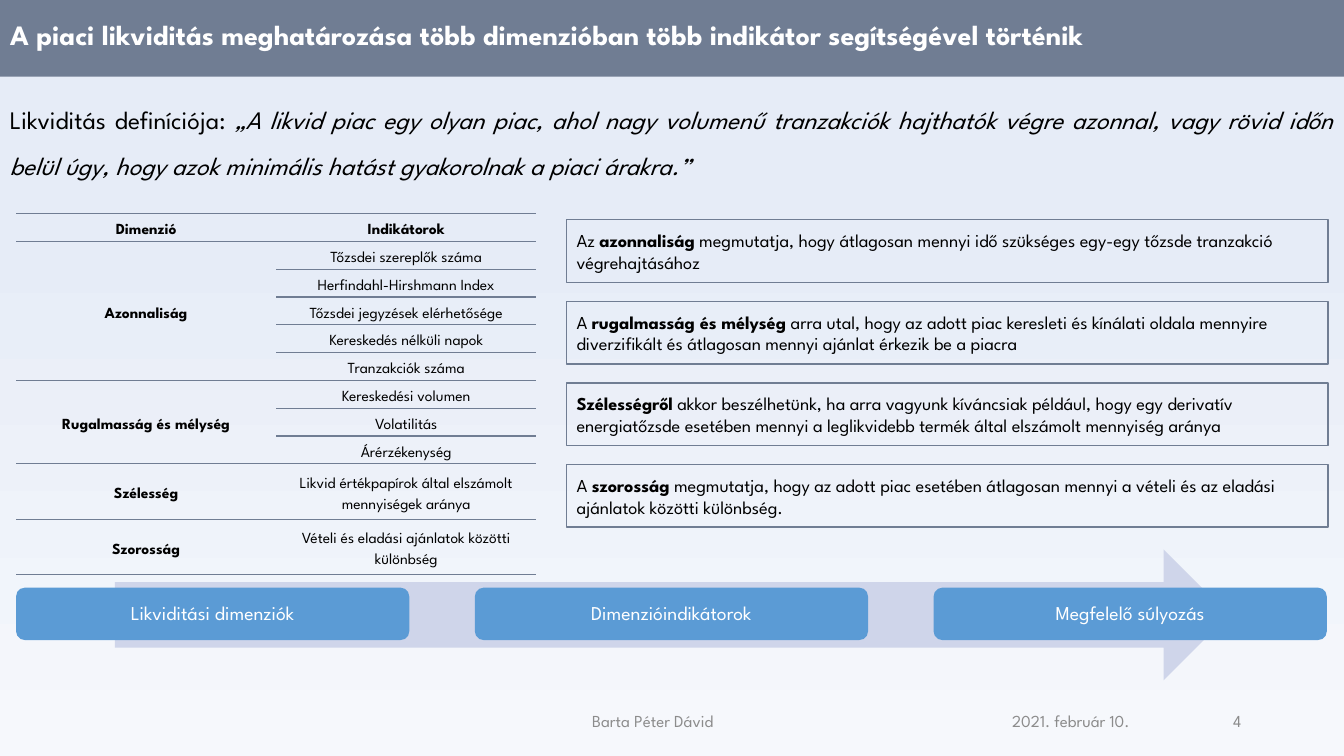
import pptx
import pptx.util
import pptx.dml.color
import pptx.enum.shapes
import pptx.enum.text
import pptx.oxml
import pptx.oxml.ns

Inches, Pt = pptx.util.Inches, pptx.util.Pt
ALIGN = pptx.enum.text.PP_ALIGN
MIDDLE = pptx.enum.text.MSO_ANCHOR.MIDDLE
SHAPES = pptx.enum.shapes.MSO_SHAPE

# Content
FONT = "League Spartan"
SLATE, BLUE, PALE_BLUE = "707D93", "5B9BD5", "CFD5EA"
BLACK, WHITE, GREY = "000000", "FFFFFF", "8C8C8C"
PLAIN_STYLE = "{2D5ABB26-0587-4C30-8999-92F81FD0307C}"

TITLE = "A piaci likviditás meghatározása több dimenzióban több indikátor segítségével történik"
# Each run is (text, style): "" plain, "b" bold, "i" italic
DEFINITION = [
    ("Likviditás definíciója: ", ""),
    ("„A likvid piac egy olyan piac, ahol nagy volumenű tranzakciók hajthatók végre azonnal, "
     "vagy rövid időn belül úgy, hogy azok minimális hatást gyakorolnak a piaci árakra.”", "i"),
]
HEADINGS = ("Dimenzió", "Indikátorok")
DIMENSIONS = [
    ("Azonnaliság", ["Tőzsdei szereplők száma", "Herfindahl-Hirshmann Index",
                     "Tőzsdei jegyzések elérhetősége", "Kereskedés nélküli napok",
                     "Tranzakciók száma"]),
    ("Rugalmasság és mélység", ["Kereskedési volumen", "Volatilitás", "Árérzékenység"]),
    ("Szélesség", ["Likvid értékpapírok által elszámolt mennyiségek aránya"]),
    ("Szorosság", ["Vételi és eladási ajánlatok közötti különbség"]),
]
EXPLANATIONS = [
    [("Az ", ""), ("azonnaliság", "b"),
     (" megmutatja, hogy átlagosan mennyi idő szükséges egy-egy tőzsde tranzakció "
      "végrehajtásához", "")],
    [("A ", ""), ("rugalmasság és mélység ", "b"),
     ("arra utal, hogy az adott piac keresleti és kínálati oldala mennyire diverzifikált és "
      "átlagosan mennyi ajánlat érkezik be a piacra", "")],
    [("Szélességről", "b"),
     (" akkor beszélhetünk, ha arra vagyunk kíváncsiak például, hogy egy derivatív energiatőzsde "
      "esetében mennyi a leglikvidebb termék által elszámolt mennyiség aránya", "")],
    [("A ", ""), ("szorosság", "b"),
     (" megmutatja, hogy az adott piac esetében átlagosan mennyi a vételi és az eladási "
      "ajánlatok közötti különbség.", "")],
]
STEPS = ["Likviditási dimenziók", "Dimenzióindikátorok", "Megfelelő súlyozás"]
# Text, left, width, alignment
FOOTERS = [
    ("Barta Péter Dávid", 3.56, 5.83, ALIGN.CENTER),
    ("2021. február 10.", 9.94, 1.96, ALIGN.LEFT),
    ("4", 11.9, 0.51, ALIGN.RIGHT),
]


def rgb(value):
    return pptx.dml.color.RGBColor.from_string(value)


def write(frame, runs, size, color=BLACK, align=ALIGN.LEFT, spacing=1.0):
    frame.word_wrap = True
    paragraph = frame.paragraphs[0]
    paragraph.alignment = align
    paragraph.line_spacing = spacing
    for text, style in runs:
        run = paragraph.add_run()
        run.text = text
        run.font.name, run.font.size = FONT, Pt(size)
        run.font.bold, run.font.italic = style == "b", style == "i"
        run.font.color.rgb = rgb(color)


def add_shape(kind, left, top, width, height, fill=None, line=None):
    shape = slide.shapes.add_shape(kind, Inches(left), Inches(top), Inches(width), Inches(height))
    shape.shadow.inherit = False
    if fill:
        shape.fill.solid()
        shape.fill.fore_color.rgb = rgb(fill)
    else:
        shape.fill.background()
    if line:
        shape.line.color.rgb = rgb(line)
        shape.line.width = Pt(1)
    else:
        shape.line.fill.background()
    shape.text_frame.vertical_anchor = MIDDLE
    return shape


def add_text_box(left, top, width, height):
    return slide.shapes.add_textbox(Inches(left), Inches(top), Inches(width), Inches(height)).text_frame


def fill_cell(cell, text, style):
    cell.margin_left = cell.margin_right = Inches(0.07)
    cell.margin_top = cell.margin_bottom = 0
    cell.vertical_anchor = MIDDLE
    write(cell.text_frame, [(text, style)], 11, align=ALIGN.CENTER, spacing=1.5)
    cell.fill.background()
    # Rules above and below the cell
    properties = cell._tc.get_or_add_tcPr()
    for position, side in enumerate(("lnT", "lnB")):
        properties.insert(position, pptx.oxml.parse_xml(
            f'<a:{side} {pptx.oxml.ns.nsdecls("a")} w="12700"><a:solidFill>'
            f'<a:srgbClr val="{SLATE}"/></a:solidFill></a:{side}>'))


presentation = pptx.Presentation()
presentation.slide_width, presentation.slide_height = Inches(13.33), Inches(7.5)
slide = presentation.slides.add_slide(presentation.slide_layouts[5])

# Background, lighter at the bottom
background = slide.background.fill
background.gradient()
background.gradient_angle = 90
for stop, color, position in zip(background.gradient_stops, ("F6F8FC", "E6ECF7"), (0, 0.7)):
    stop.color.rgb = rgb(color)
    stop.position = position

# Title band
title = slide.shapes.title
title.left, title.top = 0, Inches(-0.03)
title.width, title.height = Inches(13.33), Inches(0.79)
title.fill.solid()
title.fill.fore_color.rgb = rgb(SLATE)
title.text_frame.vertical_anchor = MIDDLE
write(title.text_frame, [(TITLE, "b")], 20, WHITE, spacing=0.9)

# Definition
write(add_text_box(0, 0.84, 13.33, 0.95), DEFINITION, 18, align=ALIGN.JUSTIFY, spacing=1.5)

# Arrow with the three steps
add_shape(SHAPES.RIGHT_ARROW, 1.14, 5.45, 11.05, 1.3, PALE_BLUE)
for index, step in enumerate(STEPS):
    box = add_shape(SHAPES.ROUNDED_RECTANGLE, 0.16 + 4.55 * index, 5.83, 3.9, 0.52, BLUE)
    write(box.text_frame, [(step, "")], 14, WHITE, ALIGN.CENTER, 0.9)

# Table of dimensions and indicators
row_count = 1 + sum(len(indicators) for _, indicators in DIMENSIONS)
table = slide.shapes.add_table(row_count, 2, Inches(0.16), Inches(2.12),
                               Inches(5.16), Inches(3.58)).table
table.first_row = table.horz_banding = False
table._tbl.tblPr.find(pptx.oxml.ns.qn("a:tableStyleId")).text = PLAIN_STYLE
for row in table.rows:
    row.height = Inches(0.275)
for column, heading in enumerate(HEADINGS):
    table.columns[column].width = Inches(2.58)
    fill_cell(table.cell(0, column), heading, "b")
first = 1
for dimension, indicators in DIMENSIONS:
    last = first + len(indicators) - 1
    if last > first:
        table.cell(first, 0).merge(table.cell(last, 0))
    else:
        table.rows[first].height = Inches(0.55)
    fill_cell(table.cell(first, 0), dimension, "b")
    for offset, indicator in enumerate(indicators):
        fill_cell(table.cell(first + offset, 1), indicator, "")
    first = last + 1

# Explanations beside the table
for index, runs in enumerate(EXPLANATIONS):
    box = add_shape(SHAPES.RECTANGLE, 5.62, 2.18 + 0.81 * index, 7.55, 0.62, line=SLATE)
    write(box.text_frame, runs, 13)

# Footer
for text, left, width, align in FOOTERS:
    frame = add_text_box(left, 6.95, width, 0.4)
    frame.vertical_anchor = MIDDLE
    write(frame, [(text, "")], 12, GREY, align)

presentation.save("out.pptx")
